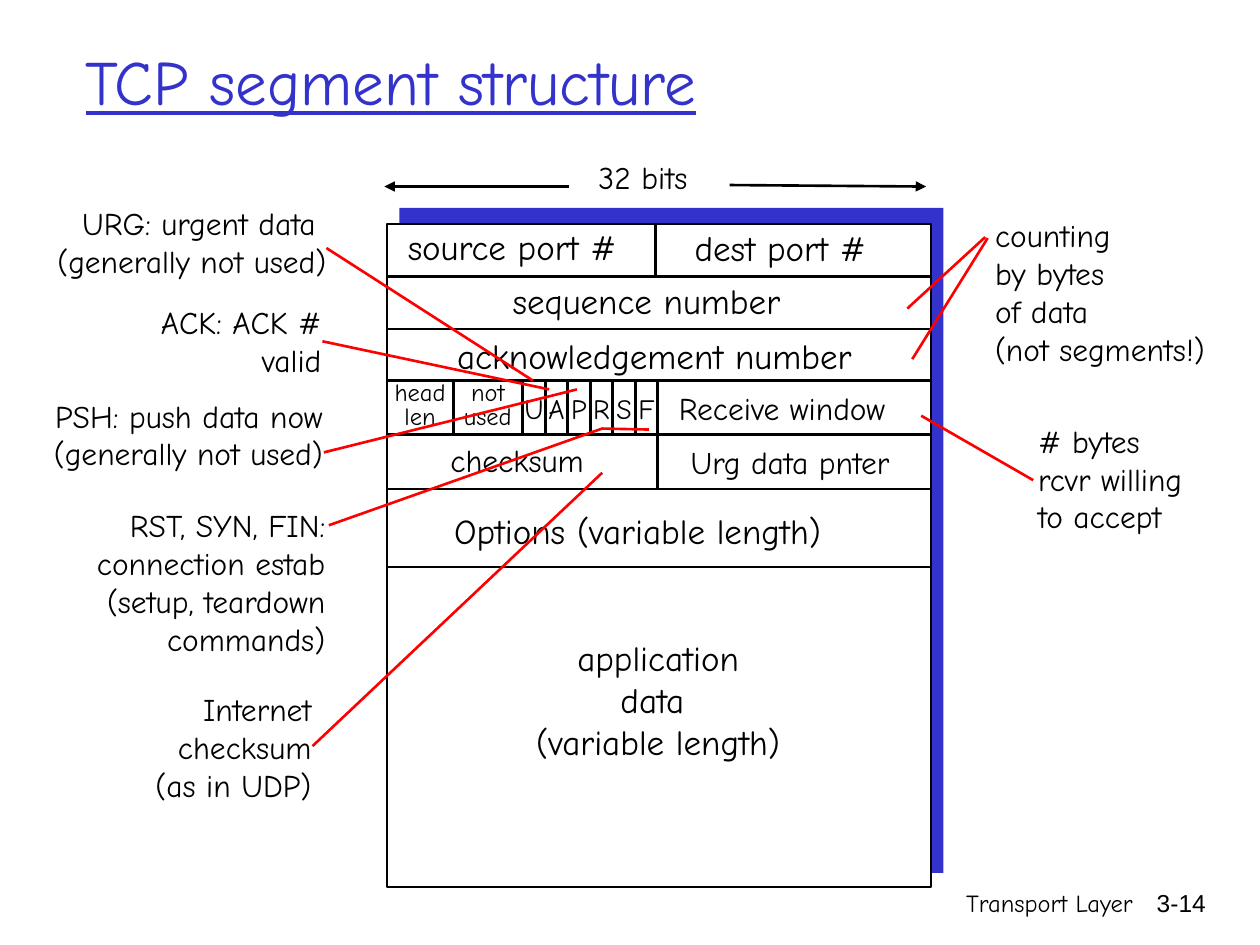
import pptx
import pptx.dml.color
import pptx.enum.shapes
import pptx.enum.text
import pptx.oxml
import pptx.util
from pptx.util import Cm, Pt

BLUE = pptx.dml.color.RGBColor(0x33, 0x33, 0xCC)
RED = pptx.dml.color.RGBColor(0xFF, 0x00, 0x00)
BLACK = pptx.dml.color.RGBColor(0x00, 0x00, 0x00)
WHITE = pptx.dml.color.RGBColor(0xFF, 0xFF, 0xFF)
FONT = "Comic Neue"
LEFT = pptx.enum.text.PP_ALIGN.LEFT
CENTER = pptx.enum.text.PP_ALIGN.CENTER
RIGHT = pptx.enum.text.PP_ALIGN.RIGHT

# All lengths are in centimetres.
TITLE = "TCP segment structure"
SHADOW = (8.05, 4.19, 10.97, 13.41)
SEGMENT = (7.8, 4.52, 10.97, 13.36)
ROW_LINES = [5.58, 6.63, 7.67, 8.76, 9.86, 11.43]
FLAGS = "UAPRSF"
FLAGS_LEFT, FLAGS_RIGHT = 10.54, 13.26
FLAG_BOX_WIDTH = 0.9

# Lines of text, size, left, top, width
FIELDS = [
    (["source port #"], 20, 7.76, 4.42, 5.13),
    (["dest port #"], 20, 13.52, 4.45, 4.42),
    (["32 bits"], 18, 11.64, 3.07, 2.64),
    (["sequence number"], 20, 9.58, 5.51, 6.91),
    (["acknowledgement number"], 20, 8.46, 6.61, 9.47),
    (["Receive window"], 18, 13.24, 7.72, 5.05),
    (["checksum"], 18, 8.75, 8.76, 3.35),
    (["Urg data pnter"], 18, 13.45, 8.81, 4.95),
    (["Options (variable length)"], 20, 8.51, 10.14, 8.69),
    (["application", "data ", "(variable length)"], 20, 10.31, 12.7, 5.92),
]
TIGHT_FIELDS = [
    (["head", "len"], 14, 7.67, 7.57, 1.6),
    (["not", "used"], 14, 9.05, 7.57, 1.57),
]
LEFT_NOTES = [
    (["URG: urgent data ", "(generally not used)"], 18, 0.48, 3.99, 6.35),
    (["ACK: ACK #", "valid"], 18, 2.64, 5.99, 4.09),
    (["PSH: push data now", "(generally not used)"], 18, 0.41, 7.87, 6.35),
    (["RST, SYN, FIN:", "connection estab", "(setup, teardown", "commands)"],
     18, 1.32, 10.08, 5.49),
    (["Internet", "checksum", "(as in UDP)"], 18, 2.77, 13.79, 3.76),
]
RIGHT_NOTES = [
    (["counting", "by bytes", "of data", "(not segments!)"], 18, 19.81, 4.24, 5.05),
    (["# bytes", "rcvr willing", "to accept"], 18, 20.68, 8.38, 3.73),
]
FOOTER = (["Transport Layer"], 14, 15.04, 17.78, 8.05)
PAGE_NUMBER = (["3-14"], 14, 22.68, 17.78, 1.88)

WIDTH_ARROWS = [(14.71, 3.73, 18.67, 3.76), (11.48, 3.76, 7.75, 3.76)]
POINTERS = [
    (6.58, 5.0, 10.74, 7.67),
    (6.5, 6.88, 11.07, 7.85),
    (6.53, 9.12, 11.63, 7.85),
    (6.3, 15.04, 12.14, 9.53),
    (20.83, 9.68, 18.57, 8.38),
    (19.91, 4.8, 18.39, 7.24),
    (19.86, 4.78, 18.29, 6.22),
]
RST_SYN_FIN_POINTER = [(6.63, 10.59), (12.14, 8.64), (13.08, 8.66)]


def add_text(page, entry, align, font=FONT, tight=False):
    """Add a text box; tight sets the line pitch to the font size."""
    lines, size, left, top, width = entry
    pitch = size if tight else 1.2 * size
    height = Pt(pitch * len(lines)) + Cm(0.25)
    box = page.shapes.add_textbox(Cm(left), Cm(top), Cm(width), height)
    frame = box.text_frame
    frame.word_wrap = False
    frame.text = "\n".join(lines)
    for para in frame.paragraphs:
        para.alignment = align
        para.font.name = font
        para.font.size = Pt(size)
        para.font.color.rgb = BLACK
        if tight:
            para.line_spacing = Pt(pitch)


def add_box(page, area, fill):
    shape = page.shapes.add_shape(
        pptx.enum.shapes.MSO_SHAPE.RECTANGLE, *map(Cm, area))
    shape.shadow.inherit = False
    shape.fill.solid()
    shape.fill.fore_color.rgb = fill
    return shape


def set_line(shape, color):
    shape.line.color.rgb = color
    shape.line.width = Pt(1.5)


def add_line(page, ends, color=BLACK, arrow=False):
    line = page.shapes.add_connector(
        pptx.enum.shapes.MSO_CONNECTOR.STRAIGHT, *map(Cm, ends))
    set_line(line, color)
    if arrow:
        head = pptx.oxml.parse_xml(
            '<a:tailEnd xmlns:a="http://schemas.openxmlformats.org/'
            'drawingml/2006/main" type="triangle"/>')
        line.line._get_or_add_ln().append(head)
    line._element.spPr.append(pptx.oxml.parse_xml(
        '<a:effectLst xmlns:a="http://schemas.openxmlformats.org/'
        'drawingml/2006/main"/>'))


def add_title(page):
    title = page.shapes.title
    title.left, title.top, title.width, title.height = map(
        Cm, (1.47, 0.53, 21.59, 2.16))
    title.text_frame.text = TITLE
    title.text_frame.vertical_anchor = pptx.enum.text.MSO_ANCHOR.MIDDLE
    para = title.text_frame.paragraphs[0]
    para.alignment = LEFT
    para.font.name = FONT
    para.font.size = Pt(36)
    para.font.underline = True
    para.font.color.rgb = BLUE


def add_segment(page):
    add_box(page, SHADOW, BLUE).line.fill.background()
    set_line(add_box(page, SEGMENT, WHITE), BLACK)
    left, top, width, _ = SEGMENT
    for y in ROW_LINES:
        add_line(page, (left, y, left + width, y))

    flags_top, flags_bottom, checksum_bottom = ROW_LINES[2:5]
    add_line(page, (13.21, top, 13.21, ROW_LINES[0]))
    add_line(page, (FLAGS_RIGHT, flags_top, FLAGS_RIGHT, checksum_bottom))
    add_line(page, (9.14, flags_top, 9.14, flags_bottom))
    pitch = (FLAGS_RIGHT - FLAGS_LEFT) / len(FLAGS)
    for index, flag in enumerate(FLAGS):
        x = FLAGS_LEFT + index * pitch
        add_line(page, (x, flags_top, x, flags_bottom))
        text_left = x + (pitch - FLAG_BOX_WIDTH) / 2
        add_text(page, ([flag], 16, text_left, 7.77, FLAG_BOX_WIDTH), CENTER)
    for field in FIELDS:
        add_text(page, field, CENTER)
    for field in TIGHT_FIELDS:
        add_text(page, field, CENTER, tight=True)
    for ends in WIDTH_ARROWS:
        add_line(page, ends, arrow=True)


def add_notes(page):
    for note in LEFT_NOTES:
        add_text(page, note, RIGHT)
    for note in RIGHT_NOTES:
        add_text(page, note, LEFT)
    for ends in POINTERS:
        add_line(page, ends, RED)
    start, *others = [(Cm(x), Cm(y)) for x, y in RST_SYN_FIN_POINTER]
    builder = page.shapes.build_freeform(*start)
    builder.add_line_segments(others, close=False)
    pointer = builder.convert_to_shape()
    pointer.shadow.inherit = False
    pointer.fill.background()
    set_line(pointer, RED)


def main():
    deck = pptx.Presentation()
    deck.slide_width, deck.slide_height = Cm(25.4), Cm(19.05)
    page = deck.slides.add_slide(deck.slide_layouts[5])
    add_title(page)
    add_segment(page)
    add_notes(page)
    add_text(page, FOOTER, RIGHT)
    add_text(page, PAGE_NUMBER, RIGHT, "Arial")
    deck.save("out.pptx")


if __name__ == "__main__":
    main()
